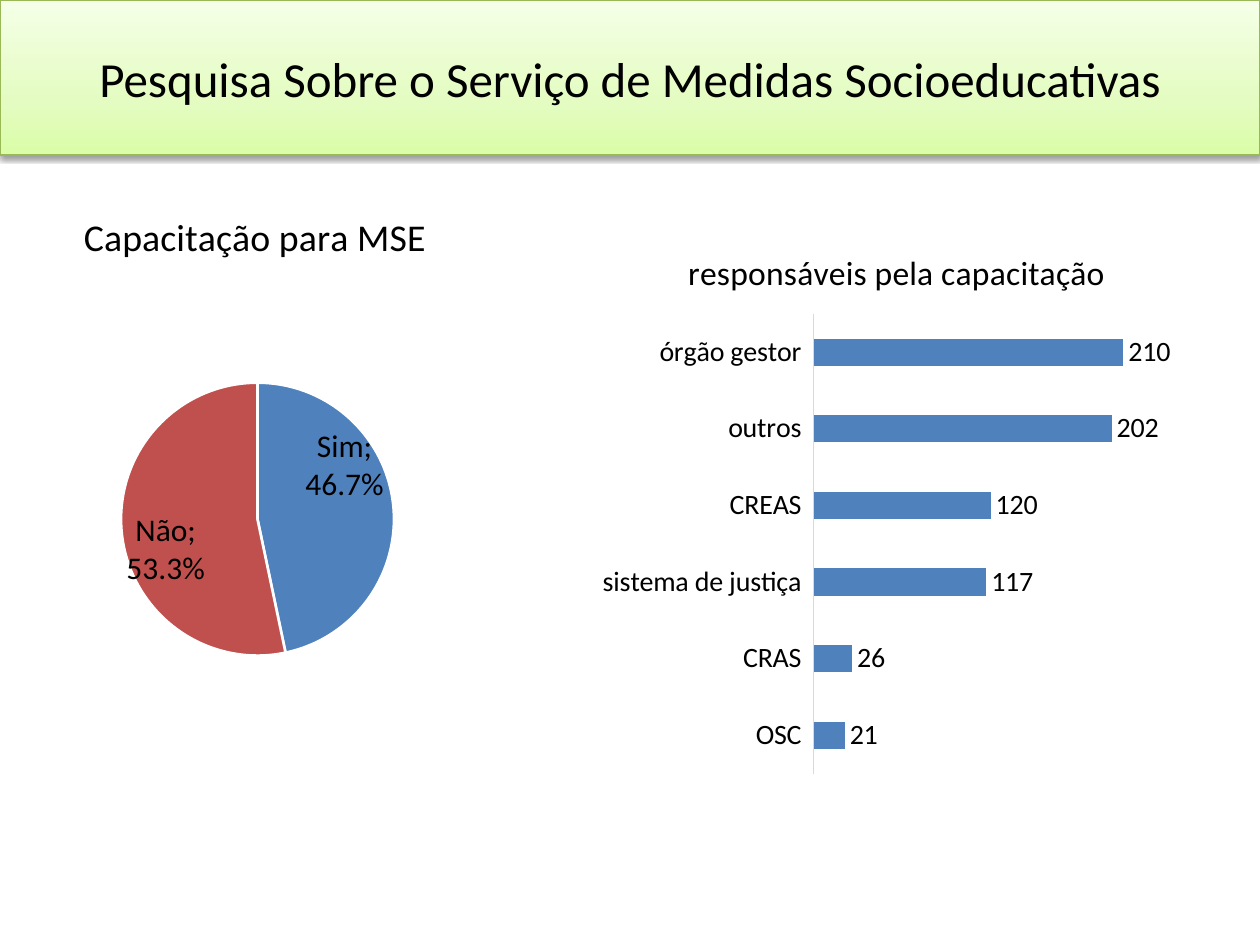
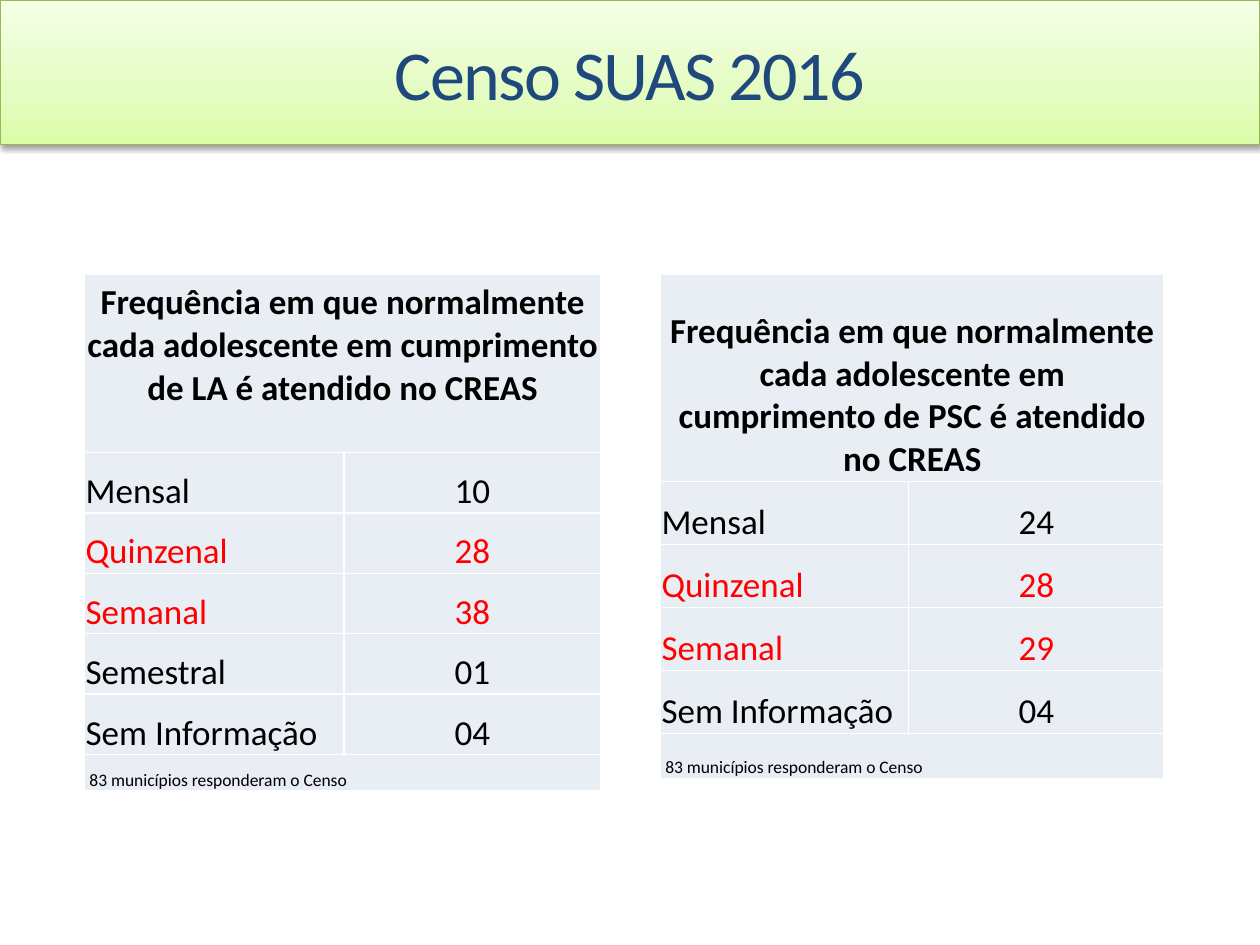
from lxml.etree import SubElement
from pptx import Presentation
from pptx.chart.data import CategoryChartData
from pptx.dml.color import RGBColor
from pptx.enum.chart import XL_CHART_TYPE, XL_LABEL_POSITION, XL_TICK_LABEL_POSITION, XL_TICK_MARK
from pptx.enum.text import MSO_ANCHOR, MSO_AUTO_SIZE, PP_ALIGN
from pptx.oxml import parse_xml
from pptx.oxml.ns import nsdecls, qn
from pptx.util import Inches, Pt

FONT = "Calibri"
COLORS = {
    "text": "000000", "navy": "1F497D", "alert": "FF0000", "white": "FFFFFF",
    "cell": "E9EDF4", "blue": "4F81BD", "red": "C0504D", "axis": "D9D9D9",
    "band_low": "DAFDA7", "band_mid": "E4FCC2", "band_high": "F5FFE7", "band_line": "98B955",
}
SLIDE_WIDTH, SLIDE_HEIGHT = 10, 7.5

SURVEY_HEADER = {"text": "Pesquisa Sobre o Serviço de Medidas Socioeducativas",
                 "height": 1.23, "size": 28, "color": "text", "spacing": 0}
CENSUS_HEADER = {"text": "Censo SUAS 2016",
                 "height": 1.15, "size": 40, "color": "navy", "spacing": -100}

TRAINING = {
    "title": "Capacitação para MSE", "title_size": 21.6, "series": "Series 1", "size": 18,
    "values": {"Sim": 0.467, "Não": 0.533}, "format": "0.0%",
    "box": (0.12, 1.47, 3.81, 4.61), "plot": (0.22, 0.34, 0.57, 0.47),
    "slices": [("blue", (0.04, -0.08)), ("red", (-0.05, 0.04))],
}
PROVIDERS = {
    "title": "responsáveis pela capacitação", "title_size": 19.2,
    "series": "responsáveis pela capacitação", "size": 16,
    "values": {"OSC": 21, "CRAS": 26, "sistema de justiça": 117,
               "CREAS": 120, "outros": 202, "órgão gestor": 210}, "format": "General",
    "box": (4.76, 1.78, 4.72, 4.45), "plot": (0.36, 0.16, 0.62, 0.82),
}

HIGHLIGHTED = ("Quinzenal", "Semanal")
CENSUS_NOTE = "83 municípios responderam o Censo"
TABLES_TOP = 2.18
FREQUENCY_TABLES = [
    {"heading": "Frequência em que normalmente cada adolescente em cumprimento de LA é atendido no CREAS",
     "counts": [("Mensal", "10"), ("Quinzenal", "28"), ("Semanal", "38"),
                ("Semestral", "01"), ("Sem Informação", "04")],
     "left": 0.67, "columns": (2.06, 2.04), "heading_row": 1.41, "count_row": 0.48,
     "note_row": 0.29, "heading_gap": 0.34},
    {"heading": "Frequência em que normalmente cada adolescente em cumprimento de PSC é atendido no CREAS",
     "counts": [("Mensal", "24"), ("Quinzenal", "28"), ("Semanal", "29"), ("Sem Informação", "04")],
     "left": 5.24, "columns": (1.97, 2.03), "heading_row": 1.64, "count_row": 0.5,
     "note_row": 0.36, "heading_gap": 0},
]


def rgb(name):
    return RGBColor.from_string(COLORS[name])


def style_font(font, size, color="text", bold=False):
    for attribute, value in {"name": FONT, "size": Pt(size), "bold": bold}.items():
        setattr(font, attribute, value)
    font.color.rgb = rgb(color)


def add_slide(prs, header):
    slide = prs.slides.add_slide(prs.slide_layouts[5])
    title = slide.shapes.title
    box = {"left": 0, "top": 0, "width": Inches(SLIDE_WIDTH), "height": Inches(header["height"])}
    for attribute, value in box.items():
        setattr(title, attribute, value)
    frame = title.text_frame
    frame.text = header["text"]
    frame.auto_size = MSO_AUTO_SIZE.NONE
    frame.vertical_anchor = MSO_ANCHOR.MIDDLE
    paragraph = frame.paragraphs[0]
    paragraph.alignment = PP_ALIGN.CENTER
    run = paragraph.runs[0]
    style_font(run.font, header["size"], header["color"])
    run.font._element.set("spc", str(header["spacing"]))

    stops = "".join(f'<a:gs pos="{share * 1000}"><a:srgbClr val="{COLORS[name]}"/></a:gs>'
                    for share, name in [(0, "band_low"), (35, "band_mid"), (100, "band_high")])
    band = [
        f'<a:gradFill {nsdecls("a")}><a:gsLst>{stops}</a:gsLst><a:lin ang="16200000" scaled="0"/></a:gradFill>',
        f'<a:ln {nsdecls("a")} w="9525"><a:solidFill><a:srgbClr val="{COLORS["band_line"]}"/></a:solidFill></a:ln>',
        f'<a:effectLst {nsdecls("a")}><a:outerShdw blurRad="40000" dist="20000" dir="5400000" rotWithShape="0">'
        f'<a:srgbClr val="{COLORS["text"]}"><a:alpha val="38000"/></a:srgbClr></a:outerShdw></a:effectLst>',
    ]
    for part in band:
        title._element.spPr.append(parse_xml(part))
    return slide


def manual_layout(offsets, target=""):
    fields = "".join(f'<c:{key} val="{value}"/>' for key, value in zip("xywh", offsets))
    modes = '<c:xMode val="edge"/><c:yMode val="edge"/>' if target else ""
    return parse_xml(f'<c:layout {nsdecls("c")}><c:manualLayout>{target}{modes}{fields}'
                     '</c:manualLayout></c:layout>')


def add_chart(slide, content, kind):
    data = CategoryChartData(number_format=content["format"])
    data.categories = list(content["values"])
    data.add_series(content["series"], list(content["values"].values()))
    chart = slide.shapes.add_chart(kind, *map(Inches, content["box"]), data).chart
    style_font(chart.font, content["size"])
    chart.has_legend = False
    chart.has_title = True
    chart.chart_title.text_frame.text = content["title"]
    style_font(chart.chart_title.text_frame.paragraphs[0].runs[0].font, content["title_size"])
    chart.chart_title.include_in_layout = False

    plot_area = chart._chartSpace.chart.plotArea
    for automatic in plot_area.findall(qn("c:layout")):
        plot_area.remove(automatic)
    plot_area.insert(0, manual_layout(content["plot"], '<c:layoutTarget val="inner"/>'))

    plot = chart.plots[0]
    plot.has_data_labels = True
    labels = plot.data_labels
    labels.show_value = True
    labels.number_format = content["format"]
    labels.number_format_is_linked = False
    style_font(labels.font, content["size"])
    return chart, plot


def add_training_pie(slide):
    chart, plot = add_chart(slide, TRAINING, XL_CHART_TYPE.PIE)
    plot.vary_by_categories = True
    plot.data_labels.show_category_name = True
    plot.data_labels.show_percentage = False
    for index, (color, offset) in enumerate(TRAINING["slices"]):
        point = plot.series[0].points[index]
        point.format.fill.solid()
        point.format.fill.fore_color.rgb = rgb(color)
        point.format.line.color.rgb = rgb("white")
        point.format.line.width = Pt(1.5)
        point.data_label.position = XL_LABEL_POSITION.CENTER
        style_font(point.data_label.font, TRAINING["size"])
        label = plot.series[0]._element.findall(".//" + qn("c:dLbl"))[index]
        label.insert(1, manual_layout(offset))
        label.insert(2, parse_xml(f'<c:numFmt {nsdecls("c")} formatCode="{TRAINING["format"]}" sourceLinked="0"/>'))
        label.find(qn("c:showCatName")).set("val", "1")
        label.find(qn("c:showPercent")).set("val", "0")
        SubElement(label, qn("c:separator")).text = ";\n"


def add_provider_bars(slide):
    chart, plot = add_chart(slide, PROVIDERS, XL_CHART_TYPE.BAR_CLUSTERED)
    plot.vary_by_categories = False
    plot.gap_width = 182
    plot.data_labels.position = XL_LABEL_POSITION.OUTSIDE_END
    bars = plot.series[0].format.fill
    bars.solid()
    bars.fore_color.rgb = rgb("blue")
    names, counts = chart.category_axis, chart.value_axis
    names.major_tick_mark = XL_TICK_MARK.NONE
    names.tick_label_position = XL_TICK_LABEL_POSITION.LOW
    names.format.line.color.rgb = rgb("axis")
    names.format.line.width = Pt(0.75)
    style_font(names.tick_labels.font, PROVIDERS["size"])
    counts.visible = False
    counts.has_major_gridlines = False
    counts.minimum_scale, counts.maximum_scale = 0, 250


def fill_cell(cell, text, size=20, color="text", bold=False, align=PP_ALIGN.LEFT, left=0.01, bottom=0):
    margins = {"margin_left": left, "margin_right": 0.01, "margin_top": 0.01, "margin_bottom": bottom}
    for attribute, value in margins.items():
        setattr(cell, attribute, Inches(value))
    cell.vertical_anchor = MSO_ANCHOR.BOTTOM
    cell.text = text
    cell.text_frame.paragraphs[0].alignment = align
    style_font(cell.text_frame.paragraphs[0].runs[0].font, size, color, bold)


def add_frequency_table(slide, content):
    counts = content["counts"]
    heights = [content["heading_row"], *[content["count_row"]] * len(counts), content["note_row"]]
    table = slide.shapes.add_table(
        len(heights), 2, Inches(content["left"]), Inches(TABLES_TOP),
        Inches(sum(content["columns"])), Inches(sum(heights))).table
    for column, width in zip(table.columns, content["columns"]):
        column.width = Inches(width)
    for row, height in zip(table.rows, heights):
        row.height = Inches(height)
    table.first_row = table.horz_banding = False

    for cell in table.iter_cells():
        cell.fill.solid()
        cell.fill.fore_color.rgb = rgb("cell")
        for position, side in enumerate("LRTB"):
            cell._tc.tcPr.insert(position, parse_xml(
                f'<a:ln{side} {nsdecls("a")} w="12700"><a:solidFill>'
                f'<a:srgbClr val="{COLORS["white"]}"/></a:solidFill></a:ln{side}>'))

    last = len(heights) - 1
    for row in (0, last):
        table.cell(row, 0).merge(table.cell(row, 1))
    fill_cell(table.cell(0, 0), content["heading"], bold=True, align=PP_ALIGN.CENTER,
              bottom=content["heading_gap"])
    for row, (frequency, count) in enumerate(counts, 1):
        color = "alert" if frequency in HIGHLIGHTED else "text"
        fill_cell(table.cell(row, 0), frequency, color=color)
        fill_cell(table.cell(row, 1), count, color=color, align=PP_ALIGN.CENTER)
    fill_cell(table.cell(last, 0), CENSUS_NOTE, size=10, left=0.04)


def main():
    prs = Presentation()
    prs.slide_width, prs.slide_height = Inches(SLIDE_WIDTH), Inches(SLIDE_HEIGHT)
    survey = add_slide(prs, SURVEY_HEADER)
    add_training_pie(survey)
    add_provider_bars(survey)
    census = add_slide(prs, CENSUS_HEADER)
    for content in FREQUENCY_TABLES:
        add_frequency_table(census, content)
    prs.save("out.pptx")


if __name__ == "__main__":
    main()
